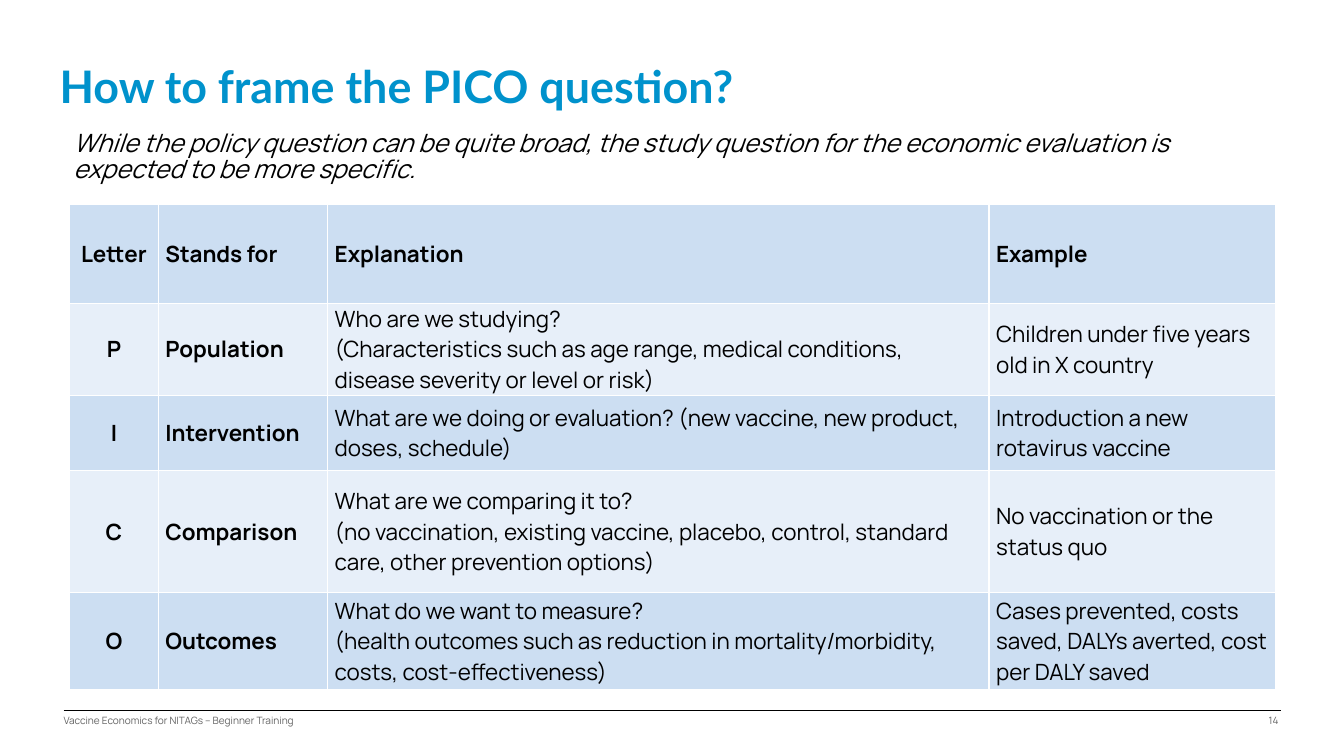
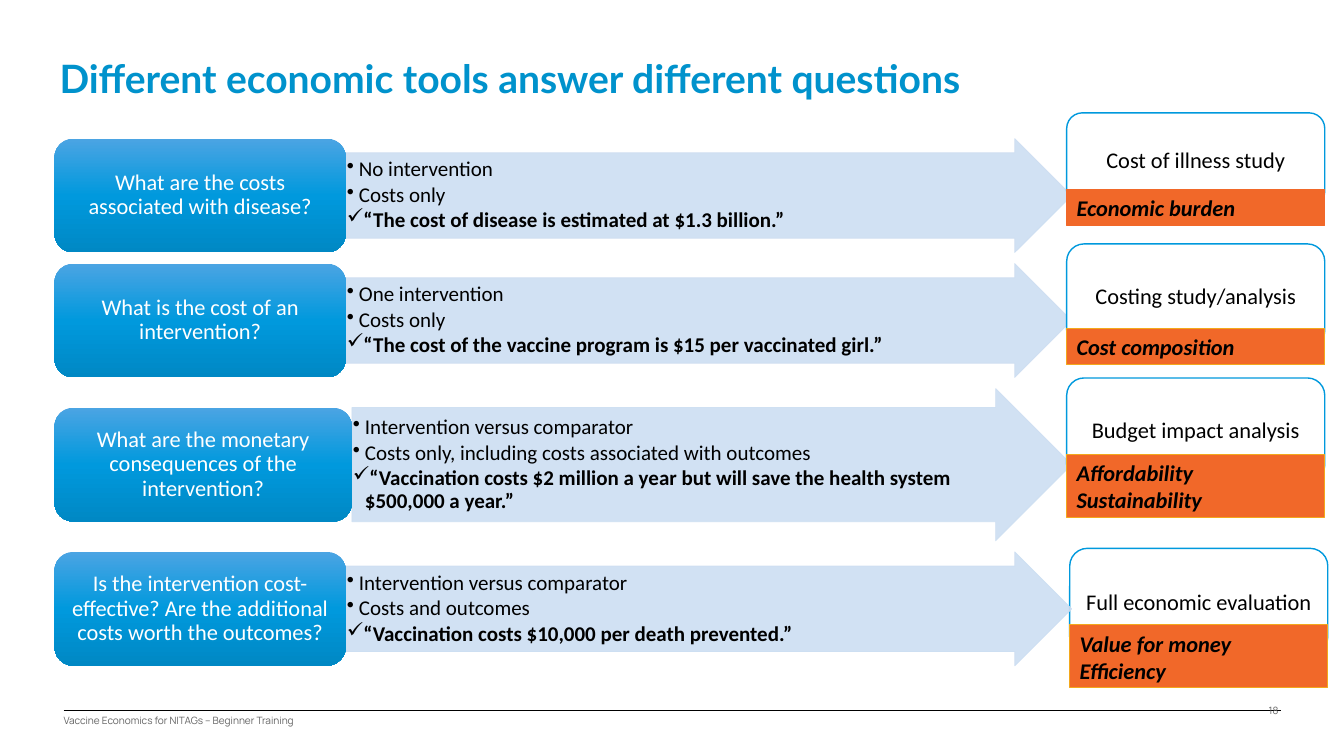
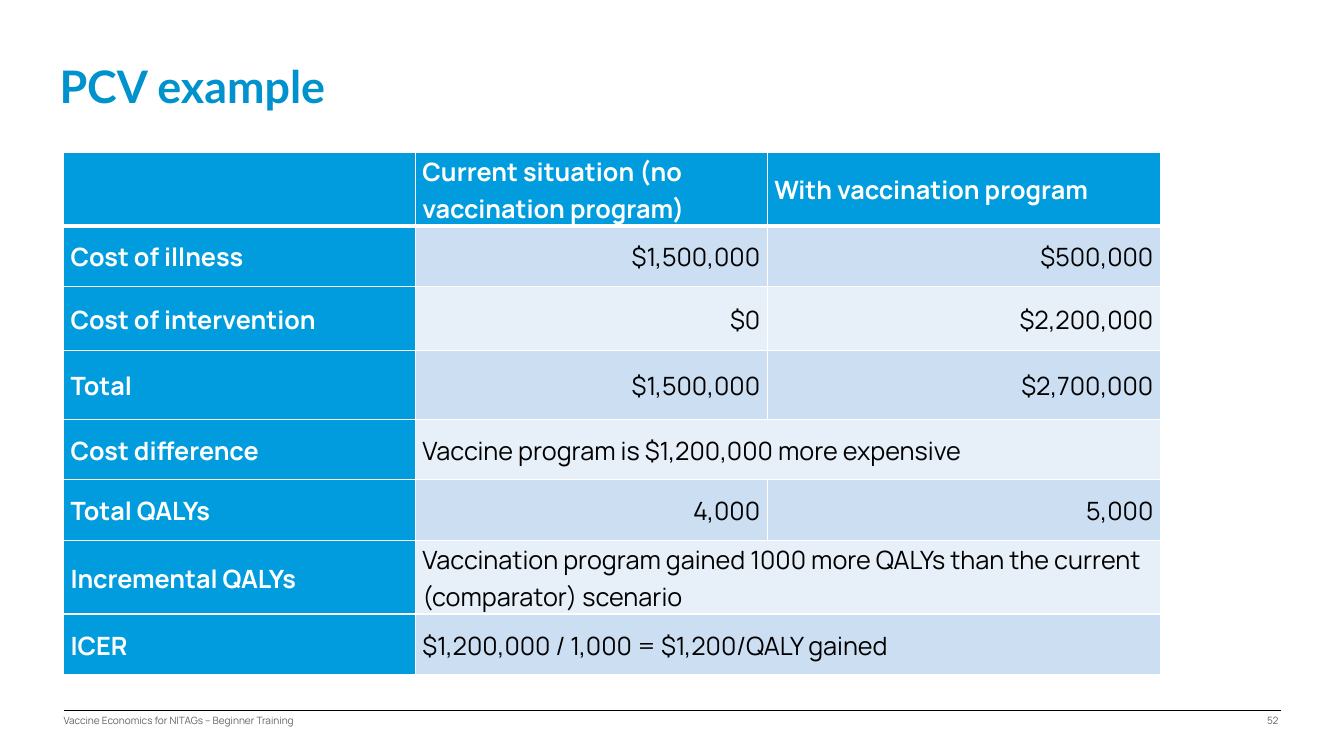
from dataclasses import dataclass

from lxml import etree
from pptx import Presentation
from pptx.dml.color import RGBColor
from pptx.enum.shapes import MSO_CONNECTOR, MSO_SHAPE
from pptx.enum.text import MSO_ANCHOR, MSO_AUTO_SIZE, PP_ALIGN
from pptx.oxml.ns import qn
from pptx.util import Inches, Pt

LEFT, CENTER, RIGHT = PP_ALIGN.LEFT, PP_ALIGN.CENTER, PP_ALIGN.RIGHT
TOP, MIDDLE = MSO_ANCHOR.TOP, MSO_ANCHOR.MIDDLE
ROUNDED, ARROW, RECT = MSO_SHAPE.ROUNDED_RECTANGLE, MSO_SHAPE.RIGHT_ARROW, MSO_SHAPE.RECTANGLE
STRAIGHT = MSO_CONNECTOR.STRAIGHT
NO_FIT = MSO_AUTO_SIZE.NONE


@dataclass(frozen=True)
class Theme:
    # Colours
    title: str = "0092CC"
    header: str = "009CDE"
    accent: str = "0099DD"
    gradient: tuple = ((0, "4BA4E3"), (50, "0099DD"), (100, "0088C4"))
    band: str = "CCDEF2"
    band_light: str = "E7EFF9"
    tag: str = "F16829"
    tag_line: str = "F3A81C"
    footer: str = "646464"
    black: str = "000000"
    white: str = "FFFFFF"
    # Fonts
    title_font: str = "Lato"
    body_font: str = "Manrope"
    diagram_font: str = "Calibri"
    # Type sizes
    title_size: float = 32
    long_title_size: float = 27.9
    intro_size: float = 18
    table_size: float = 16
    big_table_size: float = 18
    box_size: float = 16
    arrow_size: float = 15
    footer_size: float = 7.2


T = Theme()


# ---- Helpers ----
def rgb(value):
    return RGBColor.from_string(value)


def write(tf, text, font=T.body_font, size=T.box_size, color=T.black, bold=False,
          italic=False, align=LEFT, line=None, after=None):
    """Write one paragraph per line of text and return the paragraphs."""
    for i, words in enumerate(text.split("\n")):
        p = tf.paragraphs[0] if i == 0 else tf.add_paragraph()
        p.alignment = align
        if line:
            p.line_spacing = line
        if after is not None:
            p.space_after = Pt(after)
        r = p.add_run()
        r.text = words
        r.font.name, r.font.size = font, Pt(size)
        r.font.bold, r.font.italic = bold, italic
        r.font.color.rgb = rgb(color)
    return tf.paragraphs


def frame(sp, anchor=TOP, x=0.1, y=0.05):
    """Set wrapping, anchor and insets of a shape's text frame."""
    tf = sp.text_frame
    tf.word_wrap, tf.auto_size, tf.vertical_anchor = True, NO_FIT, anchor
    tf.margin_left = tf.margin_right = Inches(x)
    tf.margin_top = tf.margin_bottom = Inches(y)
    return tf


def add_text(s, box, text, inset=(0.1, 0.05), **fmt):
    sp = s.shapes.add_textbox(*map(Inches, box))
    write(frame(sp, TOP, *inset), text, **fmt)


def add_box(s, kind, box, fill=None, line=None, width=1):
    sp = s.shapes.add_shape(kind, *map(Inches, box))
    sp.shadow.inherit = False
    if fill:
        sp.fill.solid()
        sp.fill.fore_color.rgb = rgb(fill)
    if line:
        sp.line.color.rgb = rgb(line)
        sp.line.width = Pt(width)
    else:
        sp.line.fill.background()
    return sp


def fill_gradient(sp, stops):
    sp.fill.gradient()
    sp.fill.gradient_angle = 270
    gs_list = sp._element.spPr.find(qn("a:gradFill")).find(qn("a:gsLst"))
    for old in list(gs_list):
        gs_list.remove(old)
    for pos, color in stops:
        gs = etree.SubElement(gs_list, qn("a:gs"), pos=str(pos * 1000))
        etree.SubElement(gs, qn("a:srgbClr"), val=color)


def set_alpha(sp, percent):
    for clr in sp._element.spPr.iter(qn("a:srgbClr")):
        etree.SubElement(clr, qn("a:alpha"), val=str(percent * 1000))


def add_bullet(p, char, indent=0.12):
    pPr = p._p.get_or_add_pPr()
    pPr.set("marL", str(Inches(indent)))
    pPr.set("indent", str(-Inches(indent)))
    etree.SubElement(pPr, qn("a:buChar"), char=char)


# ---- Shared slide parts ----
def new_slide(prs, title, number, top=0.59, size=T.title_size, number_top=7.09):
    s = prs.slides.add_slide(prs.slide_layouts[5])
    # Title
    sp = s.shapes.title
    sp.left, sp.top, sp.width, sp.height = map(Inches, (0.54, top, 11.33, 0.59))
    write(frame(sp, MIDDLE, 0.05, 0.04), title, font=T.title_font, size=size,
          color=T.title, bold=True, line=0.9)
    # Footer rule, text and slide number
    rule = s.shapes.add_connector(STRAIGHT, *map(Inches, (0.63, 7.05, 12.71, 7.05)))
    rule.line.color.rgb, rule.line.width = rgb(T.black), Pt(0.75)
    etree.SubElement(rule._element.spPr, qn("a:effectLst"))
    small = dict(inset=(0, 0), size=T.footer_size, color=T.footer)
    add_text(s, (0.63, 7.09, 8.28, 0.12), "Vaccine Economics for NITAGs – Beginner Training", **small)
    add_text(s, (11.7, number_top, 0.98, 0.12), str(number), align=RIGHT, **small)
    return s


# ---- Tables ----
def set_borders(cell, top=1, bottom=1):
    tcPr = cell._tc.get_or_add_tcPr()
    for side, width in (("L", 1), ("R", 1), ("T", top), ("B", bottom)):
        ln = etree.SubElement(tcPr, qn("a:ln" + side), w=str(Pt(width)))
        fill = etree.SubElement(ln, qn("a:solidFill"))
        etree.SubElement(fill, qn("a:srgbClr"), val=T.white)


def add_grid(s, left, top, cols, heights, rows, style, header_rule=1):
    """Draw a table; style(row, column, merged) gives the fill and text format.

    A row shorter than the table has its last cell merged to the right edge."""
    box = (left, top, sum(cols), sum(heights))
    tbl = s.shapes.add_table(len(rows), len(cols), *map(Inches, box)).table
    tbl.first_row = tbl.horz_banding = False
    for col, width in zip(tbl.columns, cols):
        col.width = Inches(width)
    for i, (row, height, texts) in enumerate(zip(tbl.rows, heights, rows)):
        row.height = Inches(height)
        merged = len(texts) < len(cols)
        for j, cell in enumerate(row.cells):
            fill, fmt = style(i, j, merged)
            set_borders(cell, top=header_rule if i == 1 else 1,
                        bottom=header_rule if i == 0 else 1)
            cell.fill.solid()
            cell.fill.fore_color.rgb = rgb(fill)
            cell.vertical_anchor = MIDDLE
            cell.margin_left = cell.margin_right = Inches(0.07)
            cell.margin_top = cell.margin_bottom = 0
            if j < len(texts) and texts[j]:
                write(cell.text_frame, texts[j], **fmt)
        if merged:
            tbl.cell(i, len(texts) - 1).merge(tbl.cell(i, len(cols) - 1))


def pico_style(i, j, merged):
    fill = T.band_light if i % 2 else T.band
    return fill, dict(size=T.table_size, bold=i == 0 or j < 2, align=LEFT if j else CENTER)


def pcv_style(i, j, merged):
    fmt = dict(size=T.big_table_size, line=1.07, after=8)
    if i == 0 or j == 0:
        return T.header, dict(fmt, color=T.white, bold=True)
    return (T.band if i % 2 else T.band_light), dict(fmt, align=LEFT if merged else RIGHT)


# ---- Question, arrow and outcome row ----
def add_question(s, box, text):
    sp = add_box(s, ROUNDED, box)
    fill_gradient(sp, T.gradient)
    write(frame(sp, MIDDLE, 0.07, 0.03), text, font=T.diagram_font, size=T.box_size,
          color=T.white, align=CENTER, line=0.9)


def add_arrow(s, box, text):
    """Block arrow whose last line is the bold, ticked conclusion."""
    sp = add_box(s, ARROW, box, T.band, T.band, 0.5)
    sp.adjustments[0], sp.adjustments[1] = 0.75, 0.5
    set_alpha(sp, 90)
    paras = write(frame(sp, MIDDLE, 0.01, 0.01), text, font=T.diagram_font,
                  size=T.arrow_size, line=0.9, after=2)
    for p in paras:
        last = p._p is paras[-1]._p
        add_bullet(p, "✓" if last else "•")
        p.runs[0].font.bold = last


def add_outcome(s, box, text):
    sp = add_box(s, ROUNDED, box, T.white, T.accent)
    write(frame(sp, MIDDLE), text, font=T.diagram_font, size=T.box_size, align=CENTER)


def add_tag(s, box, text, line):
    sp = add_box(s, RECT, box, T.tag, line, 0.75)
    write(frame(sp), text, font=T.diagram_font, size=T.box_size, bold=True, italic=True)


def add_tool_row(s, mid, question, points, outcome, tag, outcome_y, tag_y, left=0.54,
                 question_w=2.89, arrow_h=1.13, outcome_x=10.58, outcome_h=1.03,
                 tag_line=T.tag_line, tip_on_top=False):
    """One row centred on mid: question, arrow to the right, outcome with its tag."""
    question_h, arrow_end, outcome_w = 1.13, 10.63, 2.56
    arrow_x = left + question_w
    outcome_box = (outcome_x, outcome_y, outcome_w, outcome_h)
    if tip_on_top:
        add_outcome(s, outcome_box, outcome)
    add_arrow(s, (arrow_x, mid - arrow_h / 2, arrow_end - arrow_x, arrow_h), points)
    add_question(s, (left, mid - question_h / 2, question_w, question_h), question)
    if not tip_on_top:
        add_outcome(s, outcome_box, outcome)
    tag_h = 0.62 if "\n" in tag else 0.36
    add_tag(s, (outcome_x, tag_y, outcome_w, tag_h), tag, tag_line)


# ---- Content ----
PICO = [
    ("Letter", "Stands for", "Explanation", "Example"),
    ("P", "Population",
     "Who are we studying?\n(Characteristics such as age range, medical conditions, "
     "disease severity or level or risk)",
     "Children under five years old in X country"),
    ("I", "Intervention",
     "What are we doing or evaluation? (new vaccine, new product, doses, schedule)",
     "Introduction a new rotavirus vaccine"),
    ("C", "Comparison",
     "What are we comparing it to?\n(no vaccination, existing vaccine, placebo, control, "
     "standard care, other prevention options)",
     "No vaccination or the status quo"),
    ("O", "Outcomes",
     "What do we want to measure?\n(health outcomes such as reduction in "
     "mortality/morbidity, costs, cost-effectiveness)",
     "Cases prevented, costs saved, DALYs averted, cost per DALY saved"),
]

TOOLS = [
    dict(mid=1.94, question="What are the costs associated with disease?",
         points="No intervention\nCosts only\n“The cost of disease is estimated at $1.3 billion.”",
         outcome="Cost of illness study", outcome_y=1.12, outcome_h=0.93,
         tag="Economic burden", tag_y=1.88, tag_line=T.tag),
    dict(mid=3.18, question="What is the cost of an intervention?",
         points="One intervention\nCosts only\n"
                "“The cost of the vaccine program is $15 per vaccinated girl.”",
         outcome="Costing study/analysis", outcome_y=2.42,
         tag="Cost composition", tag_y=3.26),
    dict(mid=4.61, question="What are the monetary consequences of the intervention?",
         question_w=2.95, arrow_h=1.51,
         points="Intervention versus comparator\n"
                "Costs only, including costs associated with outcomes\n"
                "“Vaccination costs $2 million a year but will save the health system "
                "$500,000 a year.”",
         outcome="Budget impact analysis", outcome_y=3.75,
         tag="Affordability\nSustainability", tag_y=4.51),
    dict(mid=6.04,
         question="Is the intervention cost-effective? Are the additional costs worth the outcomes?",
         points="Intervention versus comparator\nCosts and outcomes\n"
                "“Vaccination costs $10,000 per death prevented.”",
         outcome="Full economic evaluation", outcome_x=10.61, outcome_y=5.44, outcome_h=1.05,
         tag="Value for money\nEfficiency", tag_y=6.2, tip_on_top=True),
]

PCV = [
    ("", "Current situation (no vaccination program)", "With vaccination program"),
    ("Cost of illness", "$1,500,000", "$500,000"),
    ("Cost of intervention", "$0", "$2,200,000"),
    ("Total", "$1,500,000", "$2,700,000"),
    ("Cost difference", "Vaccine program is $1,200,000 more expensive"),
    ("Total QALYs", "4,000", "5,000"),
    ("Incremental QALYs",
     "Vaccination program gained 1000 more QALYs than the current (comparator) scenario"),
    ("ICER", "$1,200,000 / 1,000 = $1,200/QALY gained"),
]


# ---- Slides ----
def pico_slide(prs):
    s = new_slide(prs, "How to frame the PICO question?", 14)
    add_grid(s, 0.69, 2.03, (0.88, 1.68, 6.56, 2.84), (0.98, 0.76, 0.75, 1.21, 0.96),
             PICO, pico_style)
    add_text(s, (0.63, 1.25, 11.5, 0.71),
             "While the policy question can be quite broad, the study question for the "
             "economic evaluation is expected to be more specific.",
             size=T.intro_size, italic=True, line=0.88)


def tools_slide(prs):
    s = new_slide(prs, "Different economic tools answer different questions", 18,
                  top=0.51, size=T.long_title_size, number_top=6.99)
    for tool in TOOLS:
        add_tool_row(s, **tool)


def pcv_slide(prs):
    s = new_slide(prs, "PCV example", 52)
    add_grid(s, 0.63, 1.51, (3.49, 3.49, 3.9), (0.71, 0.6, 0.64, 0.68, 0.6, 0.6, 0.71, 0.6),
             PCV, pcv_style, header_rule=3)


def main():
    prs = Presentation()
    prs.slide_width, prs.slide_height = Inches(13.33), Inches(7.5)
    pico_slide(prs)
    tools_slide(prs)
    pcv_slide(prs)
    prs.save("out.pptx")


if __name__ == "__main__":
    main()
